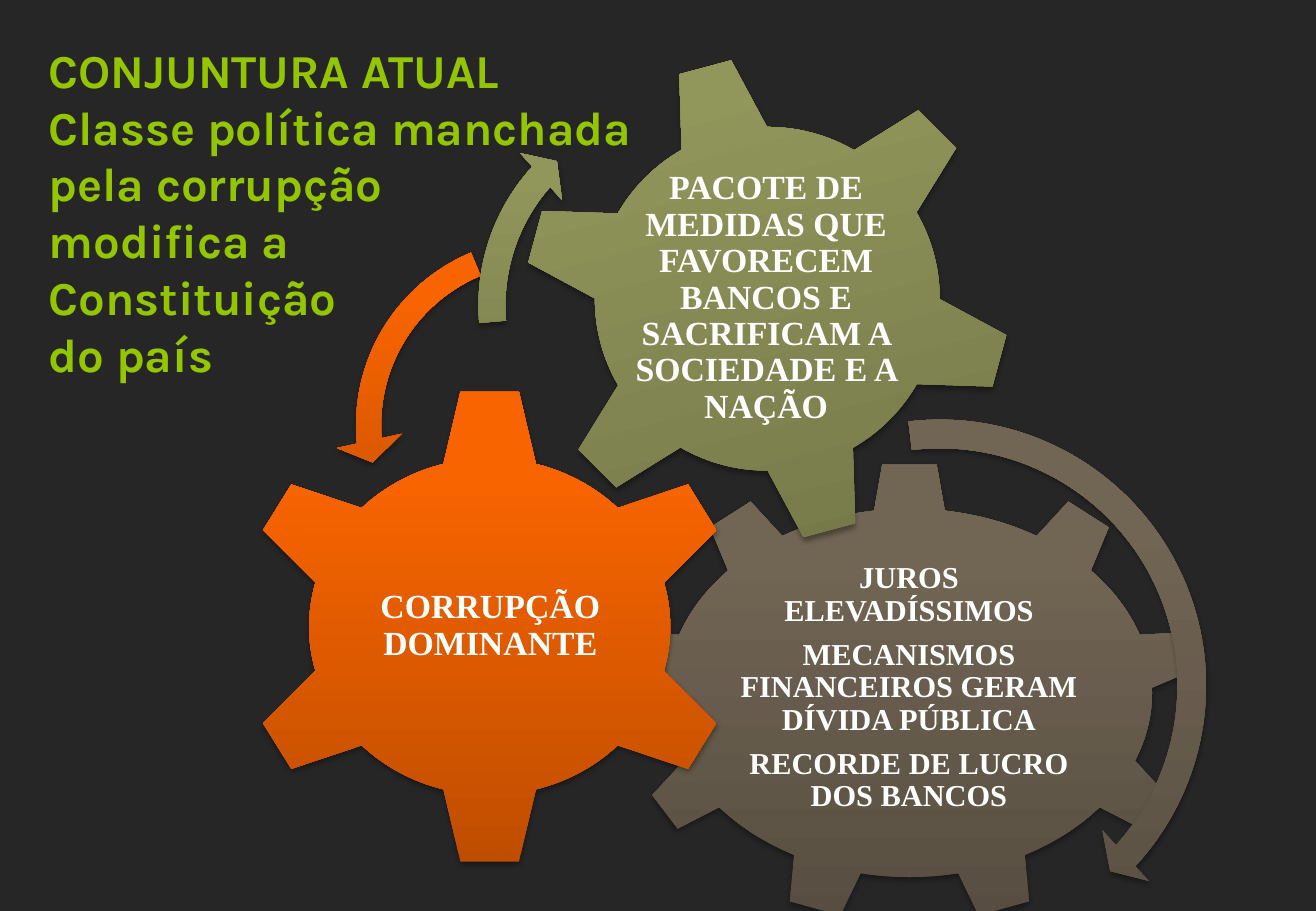
import copy
from dataclasses import dataclass

import lxml.etree
import pptx
import pptx.dml.color
import pptx.enum.shapes
import pptx.enum.text
import pptx.oxml.ns
import pptx.util

SHAPE = pptx.enum.shapes.MSO_SHAPE
ALIGN = pptx.enum.text.PP_ALIGN
ANCHOR = pptx.enum.text.MSO_ANCHOR
WIDTH = pptx.util.Inches(10.83)
HEIGHT = pptx.util.Inches(7.5)


@dataclass(frozen=True)
class Theme:
    background: str = "262626"
    title: str = "94C600"
    text: str = "FFFFFF"
    shadow: str = "000000"
    brown: tuple = ("574E41", "716554", "726654")
    orange: tuple = ("BE4D00", "F76400", "F86400")
    green: tuple = ("707446", "91965B", "93985A")
    stops: tuple = (0, 0.8, 1)
    title_font: str = "Karla"
    gear_font: str = "Times New Roman"
    title_size: int = 28
    gear_size: int = 20
    small_size: int = 18


THEME = Theme()


def rgb(value):
    return pptx.dml.color.RGBColor.from_string(value)


def share(left, top, width, height):
    return [int(size * percent / 100) for size, percent in
            zip((WIDTH, HEIGHT, WIDTH, HEIGHT), (left, top, width, height))]


def format_paragraph(p, font, size, color, align):
    p.alignment = align
    for r in p.runs:
        r.font.name = font
        r.font.size = pptx.util.Pt(size)
        r.font.bold = True
        r.font.color.rgb = rgb(color)


def fill_gradient(sp, colors):
    sp.fill.gradient()
    sp.fill.gradient_angle = 90
    first = sp._element.spPr.find(".//" + pptx.oxml.ns.qn("a:gs"))
    first.addnext(copy.deepcopy(first))
    for stop, position, color in zip(sp.fill.gradient_stops, THEME.stops, colors):
        stop.position = position
        stop.color.rgb = rgb(color)


def add_shadow(sp):
    qn = pptx.oxml.ns.qn
    sp.shadow.inherit = False
    effects = sp._element.spPr.find(qn("a:effectLst"))
    outer = lxml.etree.SubElement(effects, qn("a:outerShdw"), blurRad="39000",
                                  dist="23000", dir="5400000", rotWithShape="0")
    color = lxml.etree.SubElement(outer, qn("a:srgbClr"), val=THEME.shadow)
    lxml.etree.SubElement(color, qn("a:alpha"), val="35000")


def add_part(slide, kind, box, colors, adjustments=()):
    sp = slide.shapes.add_shape(kind, *share(*box))
    for i, value in enumerate(adjustments):
        sp.adjustments[i] = value
    fill_gradient(sp, colors)
    sp.line.fill.background()
    add_shadow(sp)
    return sp


def add_label(slide, box, lines, size):
    tf = slide.shapes.add_textbox(*share(*box)).text_frame
    tf.word_wrap = True
    tf.vertical_anchor = ANCHOR.MIDDLE
    tf.margin_left = tf.margin_right = pptx.util.Inches(0.03)
    tf.margin_top = tf.margin_bottom = pptx.util.Inches(0.03)
    tf.text = "\n".join(lines)
    for p in tf.paragraphs:
        p.line_spacing = 0.9
        p.space_after = pptx.util.Pt(0.35 * size)
        format_paragraph(p, THEME.gear_font, size, THEME.text, ALIGN.CENTER)


def set_title(slide, box, lines):
    sp = slide.shapes.title
    sp.left, sp.top, sp.width, sp.height = share(*box)
    tf = sp.text_frame
    tf.word_wrap = True
    tf.auto_size = pptx.enum.text.MSO_AUTO_SIZE.NONE
    tf.vertical_anchor = ANCHOR.TOP
    tf.text = "\n".join(lines)
    for p in tf.paragraphs:
        format_paragraph(p, THEME.title_font, THEME.title_size, THEME.title, ALIGN.LEFT)
    slide.shapes._spTree.append(sp._element)


def main():
    prs = pptx.Presentation()
    prs.slide_width, prs.slide_height = WIDTH, HEIGHT
    slide = prs.slides.add_slide(prs.slide_layouts[5])
    slide.background.fill.solid()
    slide.background.fill.fore_color.rgb = rgb(THEME.background)

    profit = add_part(slide, SHAPE.GEAR_9, (47.18, 50.8, 43.86, 50.53), THEME.brown)
    profit._element.spPr.xfrm.set("flipH", "1")
    add_label(slide, (55.31, 62.53, 27.52, 26),
              ["JUROS ELEVADÍSSIMOS",
               "MECANISMOS FINANCEIROS GERAM DÍVIDA PÚBLICA",
               "RECORDE DE LUCRO DOS BANCOS"], THEME.small_size)

    add_part(slide, SHAPE.GEAR_6, (18.01, 42.4, 38.41, 52.8), THEME.orange)
    add_label(slide, (27.52, 55.73, 19.48, 26), ["CORRUPÇÃO DOMINANTE"], THEME.gear_size)

    package_gear = add_part(slide, SHAPE.GEAR_6, (39.61, 5.87, 37.4, 53.87), THEME.green)
    package_gear.rotation = 345
    add_label(slide, (47.74, 17.6, 20.96, 30.27),
              ["PACOTE DE MEDIDAS QUE FAVORECEM BANCOS E SACRIFICAM "
               "A SOCIEDADE E A NAÇÃO"], THEME.gear_size)

    add_part(slide, SHAPE.CIRCULAR_ARROW, (49.68, 43.87, 43.49, 62.8), THEME.brown,
             (0.05, 2.99, 25.49, 157.93, 0.06))
    add_part(slide, SHAPE.LEFT_CIRCULAR_ARROW, (25.48, 23.87, 31.58, 45.6), THEME.orange,
             (0.06, 4.3, 104.89, 148.38, 0.08))
    add_part(slide, SHAPE.CIRCULAR_ARROW, (35, 8.93, 34.07, 49.2), THEME.green,
             (0.06, 3.94, 133.14, 105.08, 0.07))

    set_title(slide, (2.77, 3.87, 47.28, 39.07),
              ["CONJUNTURA ATUAL", "Classe política manchada", "pela corrupção",
               "modifica a", "Constituição", "do país"])
    prs.save("out.pptx")


if __name__ == "__main__":
    main()
